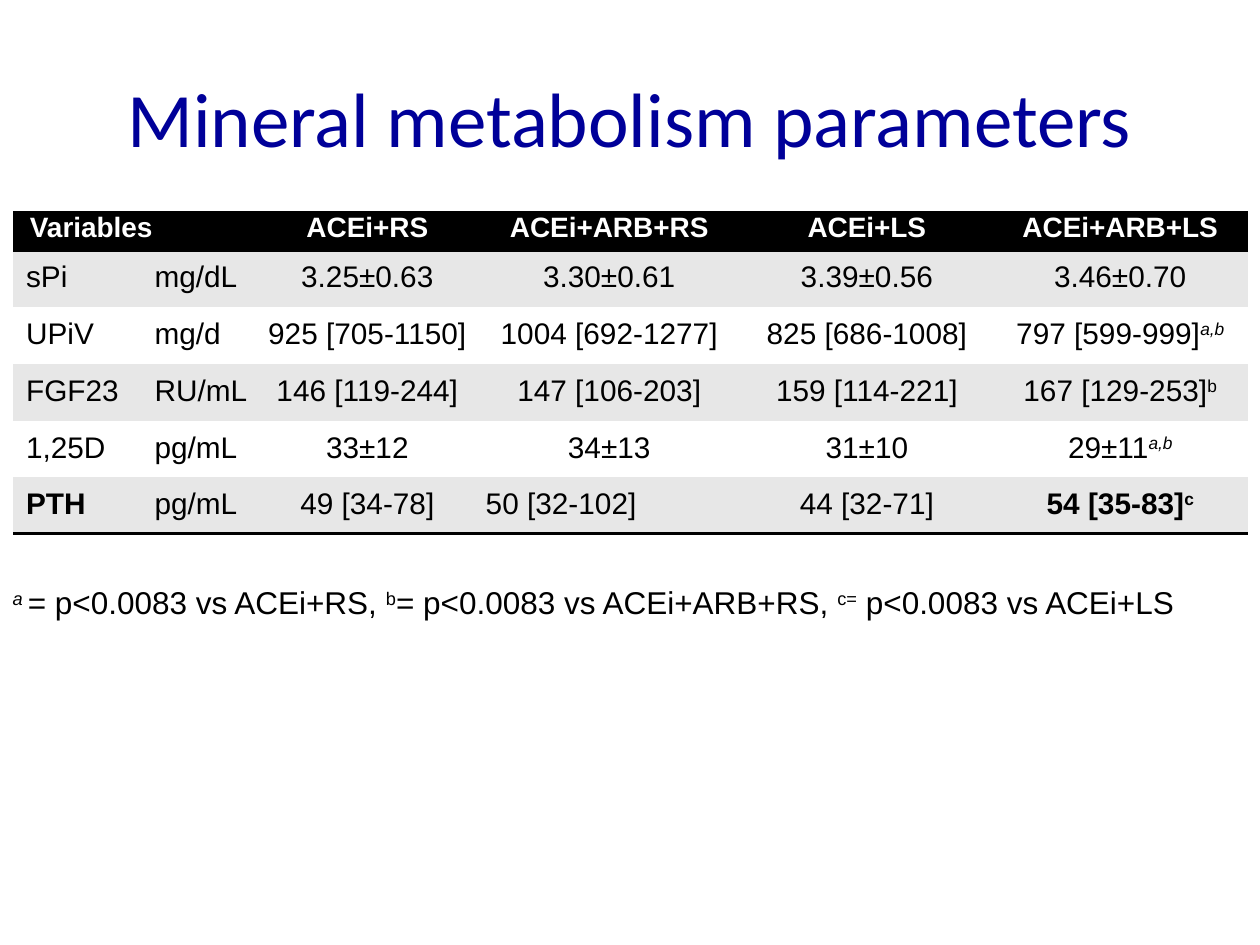
from typing import NamedTuple

from lxml.etree import SubElement
from pptx import Presentation
from pptx.dml.color import RGBColor
from pptx.enum.text import MSO_ANCHOR, PP_ALIGN
from pptx.oxml.ns import qn
from pptx.util import Pt

BLACK = RGBColor(0x00, 0x00, 0x00)
WHITE = RGBColor(0xFF, 0xFF, 0xFF)
GREY = RGBColor(0xE7, 0xE7, 0xE7)
NAVY = RGBColor(0x00, 0x00, 0x99)
NO_STYLE = "{2D5ABB26-0587-4C30-8999-92F81FD0307C}"


class Span(NamedTuple):
    text: str
    raised: bool = False
    italic: bool = False


class Style(NamedTuple):
    size: float
    color: RGBColor = BLACK
    bold: bool = False
    name: str = "Arial"


class Row(NamedTuple):
    variable: str
    unit: str
    values: tuple[str, str, str, str]
    mark: Span | None = None
    bold: bool = False


HEADERS = (" Variables", "", "ACEi+RS", "ACEi+ARB+RS", "ACEi+LS", "ACEi+ARB+LS")
COL_WIDTHS = (73.4, 66.2, 125.3, 151.2, 143.3, 146.2)
HEADER_HEIGHT, ROW_HEIGHT = 21.6, 15.84
ROWS = (
    Row("sPi", "mg/dL", ("3.25±0.63", "3.30±0.61", "3.39±0.56", "3.46±0.70")),
    Row("UPiV", "mg/d",
        ("925 [705-1150]", "1004 [692-1277]", "825 [686-1008]", "797 [599-999]"),
        Span("a,b", True, True)),
    Row("FGF23", "RU/mL",
        ("146 [119-244]", "147 [106-203]", "159 [114-221]", "167 [129-253]"),
        Span("b", True)),
    Row("1,25D", "pg/mL", ("33±12", "34±13", "31±10", "29±11"), Span("a,b", True, True)),
    Row("PTH", "pg/mL", ("49 [34-78]", "50 [32-102]", "44 [32-71]", "54 [35-83]"),
        Span("c", True), bold=True),
)
FOOTNOTE = (
    Span("a ", True, True), Span("= p<0.0083 vs ACEi+RS, "),
    Span("b", True), Span("= p<0.0083 vs ACEi+ARB+RS, "),
    Span("c=", True), Span(" p<0.0083 vs ACEi+LS"),
)


def write(p, spans: tuple[Span, ...], style: Style, align=PP_ALIGN.LEFT) -> None:
    p.alignment = align
    for span in spans:
        r = p.add_run()
        r.text = span.text
        f = r.font
        f.name, f.size, f.bold, f.italic = style.name, Pt(style.size), style.bold, span.italic
        f.color.rgb = style.color
        if span.raised:
            r._r.get_or_add_rPr().set("baseline", "30000")


def set_margins(cell, left: float, top: float, right: float, bottom: float) -> None:
    cell.margin_left, cell.margin_top = Pt(left), Pt(top)
    cell.margin_right, cell.margin_bottom = Pt(right), Pt(bottom)


def add_border(cell, side: str) -> None:
    """Add a black rule; call for the bottom before the top, and before any fill."""
    tc_pr = cell._tc.get_or_add_tcPr()
    ln = SubElement(tc_pr, qn(f"a:ln{side}"), w=str(Pt(2)))
    SubElement(SubElement(ln, qn("a:solidFill")), qn("a:srgbClr"), val=str(BLACK))
    tc_pr.insert(0, ln)


def paint(cell, color: RGBColor) -> None:
    cell.fill.solid()
    cell.fill.fore_color.rgb = color


def add_plain_table(s, rows: int, widths: tuple[float, ...], left: float, top: float,
                    heights: tuple[float, ...], frame_height: float):
    frame = s.shapes.add_table(rows, len(widths), Pt(left), Pt(top),
                               Pt(sum(widths)), Pt(frame_height))
    table = frame.table
    table.first_row = table.horz_banding = False
    table._tbl.tblPr.find(qn("a:tableStyleId")).text = NO_STYLE
    for column, width in zip(table.columns, widths):
        column.width = Pt(width)
    for row, height in zip(table.rows, heights):
        row.height = Pt(height)
    frame.height = Pt(frame_height)
    return table


def add_title(s, text: str) -> None:
    tf = s.shapes.add_textbox(Pt(36), Pt(21.6), Pt(648), Pt(90)).text_frame
    tf.word_wrap = True
    tf.vertical_anchor = MSO_ANCHOR.MIDDLE
    write(tf.paragraphs[0], (Span(text),), Style(44, NAVY, name="Calibri"), PP_ALIGN.CENTER)


def fill_header(table) -> None:
    for col, text in enumerate(HEADERS):
        cell = table.cell(0, col)
        set_margins(cell, 5, 0, 5, 0)
        add_border(cell, "B")
        add_border(cell, "T")
        paint(cell, BLACK)
        if text:
            write(cell.text_frame.paragraphs[0], (Span(text),), Style(16, WHITE, True),
                  PP_ALIGN.CENTER if col else PP_ALIGN.LEFT)
    table.cell(0, 0).merge(table.cell(0, 1))


def fill_row(table, index: int, row: Row) -> None:
    texts = (row.variable, row.unit, *row.values)
    last_col, last_row = len(texts) - 1, index == len(ROWS)
    for col, text in enumerate(texts):
        cell = table.cell(index, col)
        is_label = col < 2
        set_margins(cell, 0 if is_label else 5, 6, 0 if col == 1 else 5, 6)
        if last_row:
            add_border(cell, "B")
        paint(cell, GREY if index % 2 else WHITE)
        p = cell.text_frame.paragraphs[0]
        if is_label:
            p._p.get_or_add_pPr().set("marL", str(Pt(7.2)))
            p._p.get_or_add_pPr().set("indent", "0")
        spans = (Span(text),)
        if col == last_col and row.mark:
            spans += (row.mark,)
        left = is_label or (last_row and col == 3)
        write(p, spans, Style(17, bold=row.bold and col in (0, last_col)),
              PP_ALIGN.LEFT if left else PP_ALIGN.CENTER)


def main() -> None:
    prs = Presentation()
    prs.slide_width, prs.slide_height = Pt(720), Pt(540)
    s = prs.slides.add_slide(prs.slide_layouts[6])
    add_title(s, "Mineral metabolism parameters")

    heights = (HEADER_HEIGHT,) + (ROW_HEIGHT,) * len(ROWS)
    table = add_plain_table(s, len(heights), COL_WIDTHS, 7.7, 121.5, heights, 180)
    fill_header(table)
    for index, row in enumerate(ROWS, 1):
        fill_row(table, index, row)

    notes = add_plain_table(s, 1, (698.4,), 0, 331.2, (29.5,), 50.4)
    write(notes.cell(0, 0).text_frame.paragraphs[0], FOOTNOTE, Style(18))
    prs.save("out.pptx")


if __name__ == "__main__":
    main()
